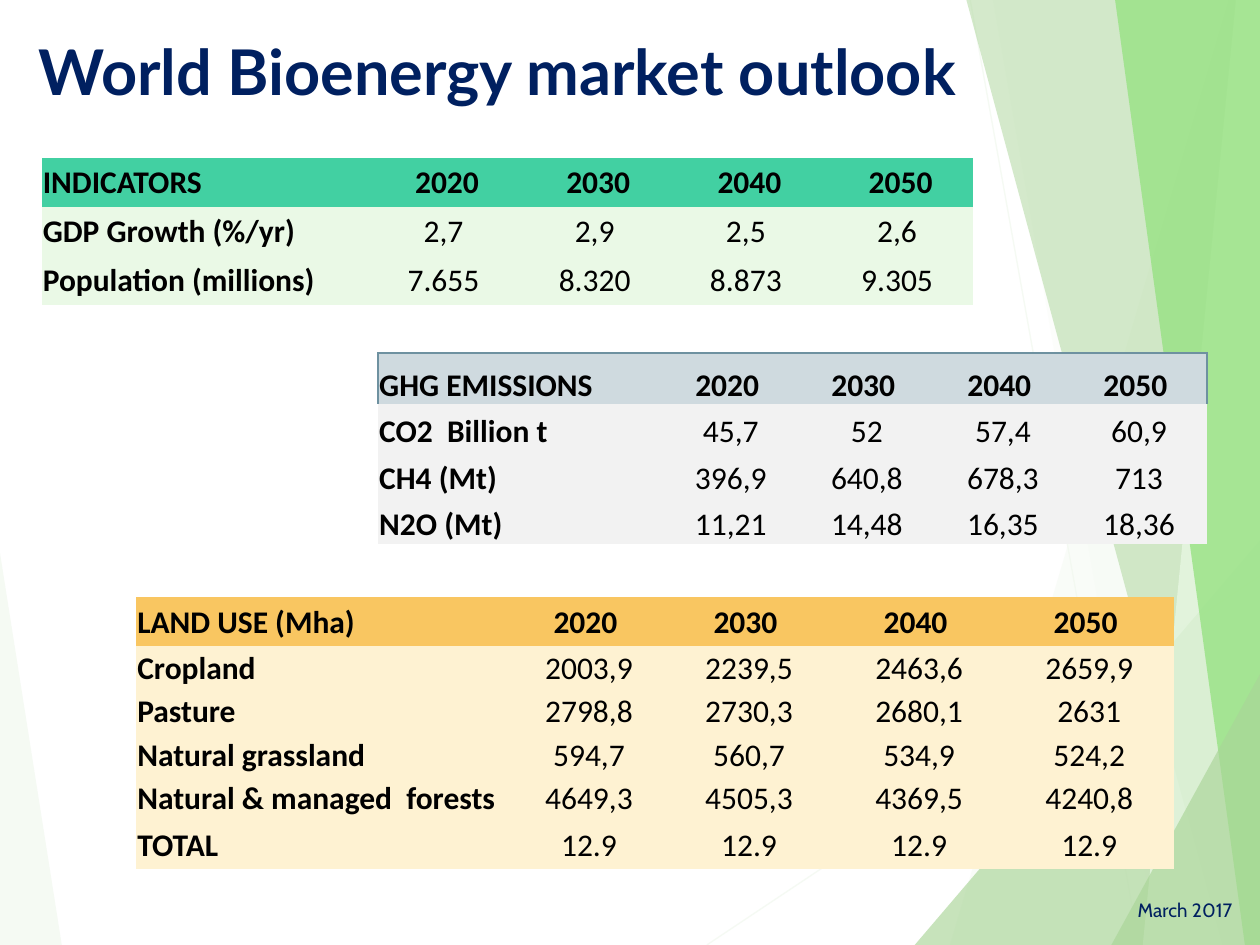
from dataclasses import dataclass

from lxml.etree import SubElement
from pptx import Presentation
from pptx.dml.color import RGBColor
from pptx.enum.shapes import MSO_CONNECTOR
from pptx.enum.text import MSO_ANCHOR, MSO_AUTO_SIZE, PP_ALIGN
from pptx.oxml import parse_xml
from pptx.oxml.ns import nsdecls, qn
from pptx.util import Emu, Inches, Pt

COLS, ROWS = 100, 75
WIDE, HIGH = Inches(10), Inches(7.5)
PLAIN = "{2D5ABB26-0587-4C30-8999-92F81FD0307C}"


@dataclass(frozen=True)
class Theme:
    ink: str = "000000"
    navy: str = "002060"
    mist: str = "F1F8EE"
    sage: str = "AAD598"
    mint: str = "EAF9E6"
    lime: str = "99E285"
    teal: str = "42D0A2"
    steel: str = "CFDADF"
    edge: str = "6E91A0"
    grey: str = "F2F2F2"
    amber: str = "F9C661"
    cream: str = "FEF2D2"
    title: float = 36
    body: float = 18
    note: float = 11
    hair: float = 0.75
    rule: float = 1


@dataclass(frozen=True)
class Shard:
    points: tuple
    color: str
    alpha: int


@dataclass(frozen=True)
class Ray:
    start: tuple
    end: tuple


@dataclass(frozen=True)
class Label:
    text: str
    box: tuple
    font: str
    size: float
    bold: bool = False
    align: PP_ALIGN = PP_ALIGN.LEFT
    wrap: bool = True


@dataclass(frozen=True)
class Grid:
    left: float
    top: float
    widths: tuple
    heights: tuple
    name: str
    year: str
    rows: tuple
    head: str
    fill: str
    anchor: MSO_ANCHOR = MSO_ANCHOR.MIDDLE
    edge: str = ""


T = Theme()
YEARS = (2020, 2030, 2040, 2050)

SHARDS = (
    Shard(((0, 43.9), (4.9, 75), (0, 75)), T.mist, 70),
    Shard(((97.5, 0), (75.4, 75), (100, 75), (100, 0)), T.mist, 36),
    Shard(((78.8, 0), (91.9, 75), (100, 75), (100, 0)), T.mist, 20),
    Shard(((72.6, 75), (100, 42.9), (100, 75)), T.sage, 66),
    Shard(((76.7, 0), (97, 75), (100, 75), (100, 0)), T.sage, 50),
    Shard(((98.1, 0), (90.7, 75), (100, 75), (100, 0)), T.mint, 70),
    Shard(((88.5, 0), (98.8, 75), (100, 75), (100, 0)), T.lime, 82),
    Shard(((88.2, 75), (100, 53.5), (100, 75)), T.sage, 66),
)
RAYS = (Ray((56.1, 75), (100, 45.7)), Ray((77, 0), (90.4, 75)))

GRIDS = (
    Grid(3.3, 12.5, (25.9,) + (12,) * 4, (3.9,) * 3, "INDICATORS", " {}", (
        ("GDP Growth (%/yr)", "2,7", "2,9", "2,5", "2,6"),
        ("Population (millions)", "7.655", "8.320", "8.873", "9.305"),
    ), T.teal, T.mint),
    Grid(30, 28, (22.6,) + (10.8,) * 4, (4.1,) + (3.7,) * 3, "GHG EMISSIONS", "{} ", (
        ("CO2  Billion t", "45,7", "52", "57,4", "60,9"),
        ("CH4 (Mt)", "396,9", "640,8", "678,3", "713"),
        ("N2O (Mt)", "11,21", "14,48", "16,35", "18,36"),
    ), T.steel, T.grey, MSO_ANCHOR.BOTTOM, T.edge),
    Grid(10.8, 47.4, (30, 11.9) + (13.5,) * 3, (3.9,) + (3.45,) * 4 + (3.9,),
         "LAND USE (Mha)", "{} ", (
        ("Cropland", "2003,9", "2239,5", "2463,6", "2659,9"),
        ("Pasture", "2798,8", "2730,3", "2680,1", "2631"),
        ("Natural grassland", "594,7", "560,7", "534,9", "524,2"),
        ("Natural & managed  forests", "4649,3", "4505,3", "4369,5", "4240,8"),
        ("TOTAL",) + ("12.9",) * 4,
    ), T.amber, T.cream),
)

LABELS = (
    Label("March 2017", (86.4, 70.8, 12.4, 4), "Cabin", T.note, align=PP_ALIGN.RIGHT),
    Label("World Bioenergy market outlook", (2.1, 2.1, 81.6, 7.1), "Lato",
          T.title, bold=True, wrap=False),
)


def col(n: float) -> Emu:
    return Emu(round(WIDE * n / COLS))


def row(n: float) -> Emu:
    return Emu(round(HIGH * n / ROWS))


def spot(point: tuple) -> tuple:
    return col(point[0]), row(point[1])


def tint(fill, color: str) -> None:
    fill.solid()
    fill.fore_color.rgb = RGBColor.from_string(color)


def fade(shape, alpha: int) -> None:
    for node in shape.element.spPr.iter(qn("a:srgbClr")):
        SubElement(node, qn("a:alpha")).set("val", str(alpha * 1000))


def write(frame, text: str, font: str, size: float, color: str,
          bold: bool, align: PP_ALIGN) -> None:
    para = frame.paragraphs[0]
    para.alignment = align
    run = para.add_run()
    run.text = text
    run.font.name, run.font.size, run.font.bold = font, Pt(size), bold
    run.font.color.rgb = RGBColor.from_string(color)


def draw_shard(slide, shard: Shard) -> None:
    first, *rest = map(spot, shard.points)
    pen = slide.shapes.build_freeform(*first)
    pen.add_line_segments(rest, close=True)
    shape = pen.convert_to_shape()
    shape.shadow.inherit = False
    shape.line.fill.background()
    tint(shape.fill, shard.color)
    fade(shape, shard.alpha)


def draw_ray(slide, ray: Ray) -> None:
    line = slide.shapes.add_connector(
        MSO_CONNECTOR.STRAIGHT, *spot(ray.start), *spot(ray.end))
    line.line.width = Pt(T.hair)
    tint(line.line.fill, T.mist)
    fade(line, 70)
    SubElement(line.element.spPr, qn("a:effectLst"))


def draw_label(slide, label: Label) -> None:
    left, top, width, height = label.box
    box = slide.shapes.add_textbox(col(left), row(top), col(width), row(height))
    frame = box.text_frame
    frame.word_wrap = label.wrap
    if not label.wrap:
        frame.auto_size = MSO_AUTO_SIZE.SHAPE_TO_FIT_TEXT
    write(frame, label.text, label.font, label.size, T.navy, label.bold, label.align)


def rule(cell, sides: str, color: str) -> None:
    for i, side in enumerate(sides):
        cell._tc.get_or_add_tcPr().insert(i, parse_xml(
            f'<a:ln{side} {nsdecls("a")} w="{Pt(T.rule)}"><a:solidFill>'
            f'<a:srgbClr val="{color}"/></a:solidFill></a:ln{side}>'))


def draw_grid(slide, grid: Grid) -> None:
    head = (grid.name, *(grid.year.format(year) for year in YEARS))
    data = (head, *grid.rows)
    last = len(head) - 1
    frame = slide.shapes.add_table(
        len(data), len(head), col(grid.left), row(grid.top),
        col(sum(grid.widths)), row(sum(grid.heights)))
    table = frame.table
    table.horz_banding = False
    next(frame.element.iter(qn("a:tableStyleId"))).text = PLAIN
    for x, width in enumerate(grid.widths):
        table.columns[x].width = col(width)
    for y, texts in enumerate(data):
        table.rows[y].height = row(grid.heights[y])
        for x, text in enumerate(texts):
            cell = table.cell(y, x)
            cell.margin_left = cell.margin_right = cell.margin_top = Inches(0.01)
            cell.margin_bottom = 0
            cell.vertical_anchor = grid.anchor
            tint(cell.fill, grid.fill if y else grid.head)
            write(cell.text_frame, text, "Calibri", T.body, T.ink,
                  y == 0 or x == 0, PP_ALIGN.CENTER if x else PP_ALIGN.LEFT)
            if grid.edge and y == 0:
                rule(cell, {0: "LT", last: "RT"}.get(x, "T"), grid.edge)


def main() -> None:
    deck = Presentation()
    deck.slide_width, deck.slide_height = WIDE, HIGH
    slide = deck.slides.add_slide(deck.slide_layouts[6])
    tint(slide.background.fill, "FFFFFF")
    for draw, items in ((draw_ray, RAYS), (draw_shard, SHARDS),
                        (draw_grid, GRIDS), (draw_label, LABELS)):
        for item in items:
            draw(slide, item)
    deck.save("out.pptx")


if __name__ == "__main__":
    main()
